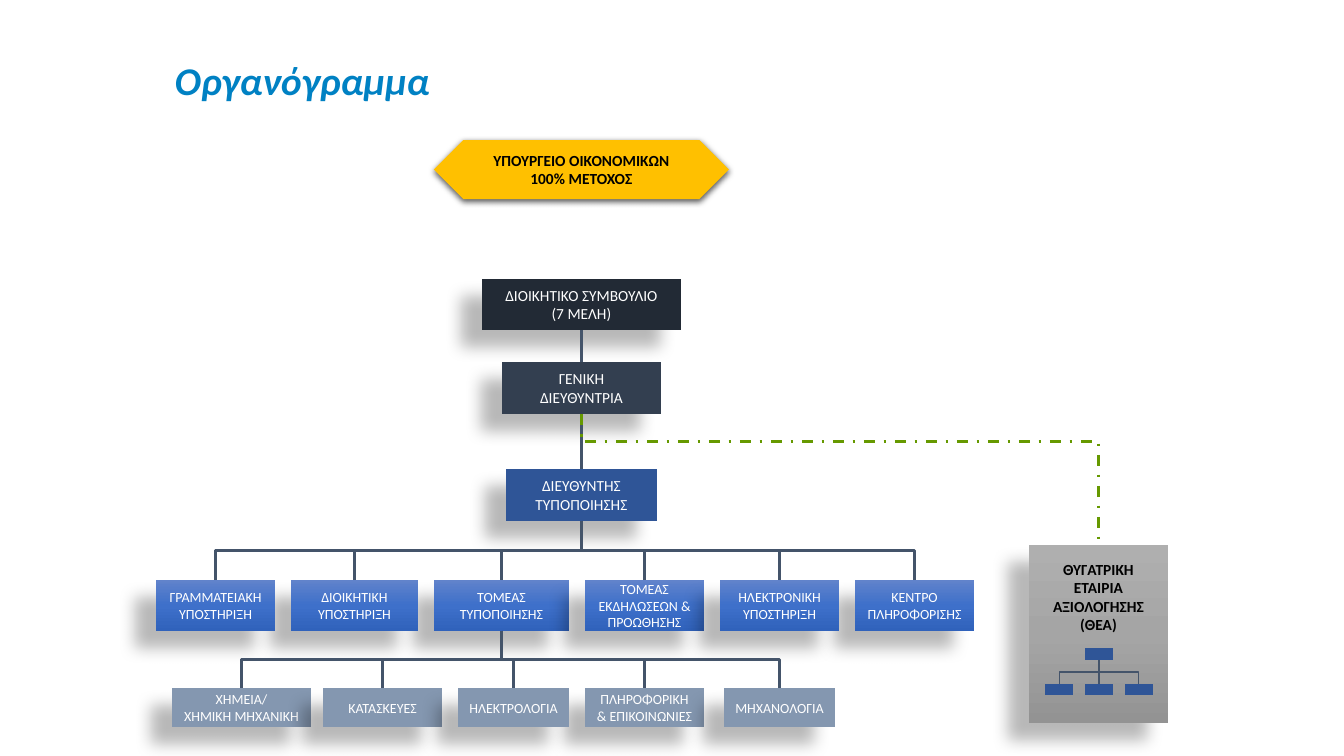
from copy import deepcopy

from lxml import etree
from pptx import Presentation
from pptx.dml.color import RGBColor
from pptx.enum.dml import MSO_LINE
from pptx.enum.shapes import MSO_CONNECTOR, MSO_SHAPE
from pptx.enum.text import MSO_ANCHOR, PP_ALIGN
from pptx.oxml.ns import qn
from pptx.util import Pt

EMU_PER_PX = 914400 / 100.8
FONT = "Calibri"
PROCESS = MSO_SHAPE.FLOWCHART_PROCESS
SNIPPED = MSO_SHAPE.SNIP_2_SAME_RECTANGLE
STRAIGHT, ELBOW = MSO_CONNECTOR.STRAIGHT, MSO_CONNECTOR.ELBOW
DASH_DOT = MSO_LINE.DASH_DOT
CENTER, LEFT = PP_ALIGN.CENTER, PP_ALIGN.LEFT
MIDDLE, TOP = MSO_ANCHOR.MIDDLE, MSO_ANCHOR.TOP
BOTTOM_SITE, TOP_SITE = 2, 0

COLORS = {
    "title": "0081C3", "ministry": "FFC000", "board": "222A35",
    "general": "333F50", "director": "2F5597", "unit": "8497B0",
    "line": "44546A", "dashed": "669900", "white": "FFFFFF", "black": "000000",
}
GRADIENTS = {
    "sector": ("6183CB", "3E70CA", "3062BB"),
    "company": ("AFAFAF", "A5A5A5", "939393"),
}

# Shadow: opacity %, blur pt, distance pt, direction in degrees
DEEP_SHADOW = (28, 11.8, 19.7, 141)
CLOSE_SHADOW = (63, 4.5, 1.5, 90)

# Left, width and text of each box, from back to front
SECTOR_TOP, SECTOR_HEIGHT = 580, 51
SECTORS = [
    (855, 119, "ΚΕΝΤΡΟ ΠΛΗΡΟΦΟΡΙΣΗΣ"),
    (434, 135, "ΤΟΜΕΑΣ ΤΥΠΟΠΟΙΗΣΗΣ"),
    (585, 119, "ΤΟΜΕΑΣ ΕΚΔΗΛΩΣΕΩΝ & ΠΡΟΩΘΗΣΗΣ"),
    (291, 127, "ΔΙΟΙΚΗΤΙΚΗ ΥΠΟΣΤΗΡΙΞΗ"),
    (720, 119, "ΗΛΕΚΤΡΟΝΙΚΗ ΥΠΟΣΤΗΡΙΞΗ"),
    (156, 119, "ΓΡΑΜΜΑΤΕΙΑΚΗ ΥΠΟΣΤΗΡΙΞΗ"),
]
STANDARDS_SECTOR = 1
UNIT_TOP, UNIT_HEIGHT = 688, 39
UNITS = [
    (172, 139, "ΧΗΜΕΙΑ/\nΧΗΜΙΚΗ ΜΗΧΑΝΙΚΗ"),
    (585, 119, "ΠΛΗΡΟΦΟΡΙΚΗ & ΕΠΙΚΟΙΝΩΝΙΕΣ"),
    (323, 119, "ΚΑΤΑΣΚΕΥΕΣ"),
    (724, 111, "ΜΗΧΑΝΟΛΟΓΙΑ"),
    (458, 111, "ΗΛΕΚΤΡΟΛΟΓΙΑ"),
]


def px(value):
    return round(value * EMU_PER_PX)


def rgb(name):
    return RGBColor.from_string(COLORS[name])


def write(shape, text, size, color, bold=False, italic=False,
          align=CENTER, anchor=MIDDLE):
    frame = shape.text_frame
    frame.word_wrap = True
    frame.vertical_anchor = anchor
    for index, line in enumerate(text.split("\n")):
        paragraph = frame.paragraphs[0] if index == 0 else frame.add_paragraph()
        paragraph.alignment = align
        run = paragraph.add_run()
        run.text = line
        run.font.name = FONT
        run.font.size = Pt(size)
        run.font.bold = bold
        run.font.italic = italic
        run.font.color.rgb = rgb(color)


def fill_gradient(shape, colors):
    fill = shape.fill
    fill.gradient()
    fill.gradient_angle = 270
    first_stop = shape._element.spPr.find(".//" + qn("a:gs"))
    first_stop.addnext(deepcopy(first_stop))
    for stop, color, position in zip(fill.gradient_stops, colors, (0, 0.5, 1)):
        stop.color.rgb = RGBColor.from_string(color)
        stop.position = position


def add_shadow(shape, opacity, blur, distance, direction):
    effects = shape._element.spPr.find(qn("a:effectLst"))
    shadow = etree.SubElement(effects, qn("a:outerShdw"), {
        "blurRad": str(Pt(blur)), "dist": str(Pt(distance)),
        "dir": str(direction * 60000), "algn": "ctr", "rotWithShape": "0"})
    color = etree.SubElement(shadow, qn("a:srgbClr"), val=COLORS["black"])
    etree.SubElement(color, qn("a:alpha"), val=str(opacity * 1000))


def add_box(slide, bounds, fill, shadow=DEEP_SHADOW, kind=PROCESS):
    shape = slide.shapes.add_shape(kind, *map(px, bounds))
    if fill in GRADIENTS:
        fill_gradient(shape, GRADIENTS[fill])
    else:
        shape.fill.solid()
        shape.fill.fore_color.rgb = rgb(fill)
    shape.line.fill.background()
    shape.shadow.inherit = False
    if shadow:
        add_shadow(shape, *shadow)
    return shape


def turn_elbow(connector, bend):
    """Make the elbow leave its parent downwards, bending at a share of the drop."""
    run = connector.end_x - connector.begin_x
    drop = connector.end_y - connector.begin_y
    middle_x = (connector.begin_x + connector.end_x) // 2
    middle_y = (connector.begin_y + connector.end_y) // 2
    connector.left, connector.top = middle_x - drop // 2, middle_y - abs(run) // 2
    connector.width, connector.height = drop, abs(run)
    frame = connector._element.spPr.find(qn("a:xfrm"))
    frame.set("rot", str((270 if run > 0 else 90) * 60000))
    frame.set("flipH", "1" if run > 0 else "0")
    adjustments = connector._element.spPr.find(".//" + qn("a:avLst"))
    etree.SubElement(adjustments, qn("a:gd"), name="adj1",
                     fmla=f"val {round(bend * 100000)}")


def connect(slide, parent, child, color="line", width=2, bend=0.5, dash=None):
    offset = parent.left + parent.width / 2 - child.left - child.width / 2
    straight = abs(offset) < px(1)
    connector = slide.shapes.add_connector(STRAIGHT if straight else ELBOW, 0, 0, 0, 0)
    connector.begin_connect(parent, BOTTOM_SITE)
    connector.end_connect(child, TOP_SITE)
    if not straight:
        turn_elbow(connector, bend)
    connector.line.color.rgb = rgb(color)
    connector.line.width = Pt(width)
    if dash:
        connector.line.dash_style = dash
    etree.SubElement(connector._element.spPr, qn("a:effectLst"))


def add_row(slide, items, top, height, fill):
    boxes = []
    for left, width, text in items:
        box = add_box(slide, (left, top, width, height), fill)
        write(box, text, 10, "white")
        boxes.append(box)
    return boxes


def add_title(slide):
    title = slide.shapes.add_textbox(*map(px, (165, 20, 793, 119)))
    write(title, "Οργανόγραμμα", 28, "title", bold=True, italic=True, align=LEFT)
    title.text_frame.paragraphs[0].space_after = Pt(6)


def add_company(slide):
    company = add_box(slide, (1029, 545, 139, 178), "company")
    write(company, "ΘΥΓΑΤΡΙΚΗ\nΕΤΑΙΡΙΑ\nΑΞΙΟΛΟΓΗΣΗΣ\n(ΘΕΑ)", 11, "black",
          bold=True, anchor=TOP)
    company.text_frame.margin_top = px(15)
    # Small chart inside the company box
    head = add_box(slide, (1085, 648, 28, 12), "director", shadow=None)
    for column in range(3):
        member = add_box(slide, (1045 + 40 * column, 684, 28, 11), "director", shadow=None)
        connect(slide, head, member, width=0.75)
    return company


def main():
    presentation = Presentation()
    presentation.slide_width, presentation.slide_height = px(1344), px(756)
    slide = presentation.slides.add_slide(presentation.slide_layouts[6])
    add_title(slide)

    # Shareholder and management
    ministry = add_box(slide, (434, 140, 295, 59), "ministry", CLOSE_SHADOW, SNIPPED)
    ministry.adjustments[0] = ministry.adjustments[1] = 0.5
    write(ministry, "ΥΠΟΥΡΓΕΙΟ ΟΙΚΟΝΟΜΙΚΩΝ\n100% ΜΕΤΟΧΟΣ", 11, "black", bold=True)
    board = add_box(slide, (482, 279, 199, 51), "board")
    write(board, "ΔΙΟΙΚΗΤΙΚΟ ΣΥΜΒΟΥΛΙΟ\n(7 ΜΕΛΗ)", 11, "white")
    general = add_box(slide, (502, 362, 159, 52), "general")
    write(general, "ΓΕΝΙΚΗ\nΔΙΕΥΘΥΝΤΡΙΑ", 11, "white")
    director = add_box(slide, (506, 469, 151, 52), "director")
    write(director, "ΔΙΕΥΘΥΝΤΗΣ\nΤΥΠΟΠΟΙΗΣΗΣ", 11, "white")

    # Sectors, units and the subsidiary company
    sectors = add_row(slide, SECTORS, SECTOR_TOP, SECTOR_HEIGHT, "sector")
    units = add_row(slide, UNITS, UNIT_TOP, UNIT_HEIGHT, "unit")
    company = add_company(slide)

    # Reporting lines
    connect(slide, board, general)
    connect(slide, general, director)
    for sector in sectors:
        connect(slide, director, sector)
    for unit in units:
        connect(slide, sectors[STANDARDS_SECTOR], unit)
    connect(slide, general, company, "dashed", bend=0.21, dash=DASH_DOT)

    presentation.save("out.pptx")


if __name__ == "__main__":
    main()
